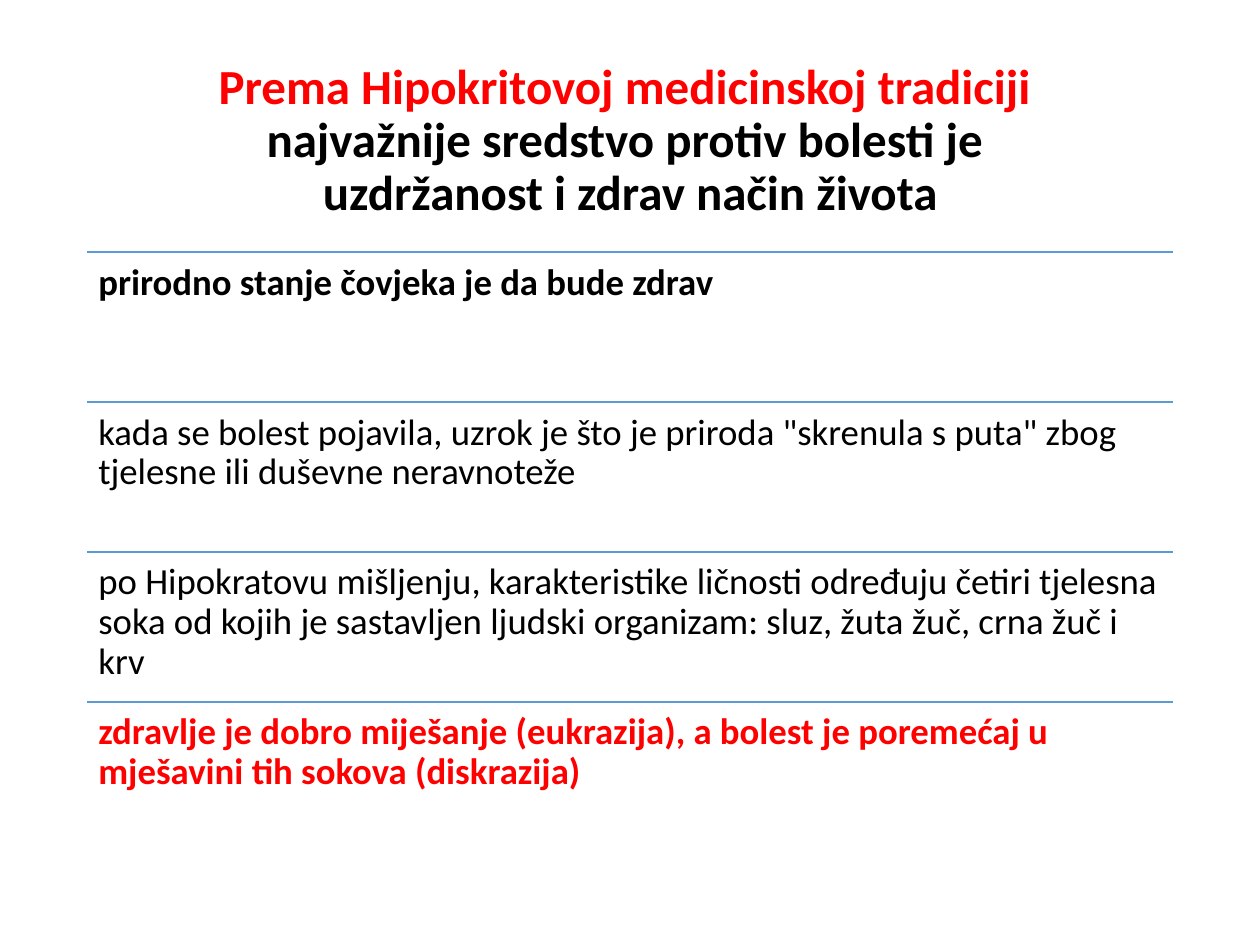
from dataclasses import dataclass

from lxml import etree
from pptx import Presentation
from pptx.dml.color import RGBColor
from pptx.enum.shapes import MSO_CONNECTOR
from pptx.enum.text import MSO_ANCHOR, MSO_AUTO_SIZE, PP_ALIGN
from pptx.oxml.ns import qn
from pptx.util import Inches, Pt

STRAIGHT = MSO_CONNECTOR.STRAIGHT
TOP, MIDDLE = MSO_ANCHOR.TOP, MSO_ANCHOR.MIDDLE
NO_FIT = MSO_AUTO_SIZE.NONE
CENTER, LEFT = PP_ALIGN.CENTER, PP_ALIGN.LEFT


@dataclass(frozen=True)
class Theme:
    font: str = "Calibri"
    title_size: int = 28
    body_size: int = 21
    accent: RGBColor = RGBColor(0xFF, 0x00, 0x00)
    text: RGBColor = RGBColor(0x00, 0x00, 0x00)
    rule: RGBColor = RGBColor(0x5B, 0x9B, 0xD5)


theme = Theme()

TITLE_LINES = [
    ("Prema Hipokritovoj medicinskoj tradiciji ", theme.accent),
    ("najvažnije sredstvo protiv bolesti je ", theme.text),
    ("uzdržanost i zdrav način života", theme.text),
]
STATEMENTS = [
    ("prirodno stanje čovjeka je da bude zdrav", theme.text, True),
    ('kada se bolest pojavila, uzrok je što je priroda "skrenula s puta" zbog '
     "tjelesne ili duševne neravnoteže", theme.text, False),
    ("po Hipokratovu mišljenju, karakteristike ličnosti određuju četiri tjelesna "
     "soka od kojih je sastavljen ljudski organizam: sluz, žuta žuč, crna žuč i krv",
     theme.text, False),
    ("zdravlje je dobro miješanje (eukrazija), a bolest je poremećaj u mješavini "
     "tih sokova (diskrazija)", theme.accent, True),
]
MARGIN, WIDTH = 0.69, 8.62
FIRST_ROW, ROW_HEIGHT = 2, 1.19


def add_span(para, text, size, color, bold):
    span = para.add_run()
    span.text = text
    span.font.name = theme.font
    span.font.size = Pt(size)
    span.font.color.rgb = color
    span.font.bold = bold


def prepare_frame(frame, anchor, align):
    """Set wrapping, anchor and line spacing; return the first paragraph."""
    frame.word_wrap = True
    frame.auto_size = NO_FIT
    frame.vertical_anchor = anchor
    para = frame.paragraphs[0]
    para.alignment = align
    para.line_spacing = 0.9
    return para


deck = Presentation()
deck.slide_width, deck.slide_height = Inches(10), Inches(7.5)
page = deck.slides.add_slide(deck.slide_layouts[5])

title = page.shapes.title
title.left, title.top = Inches(MARGIN), Inches(0.4)
title.width, title.height = Inches(WIDTH), Inches(1.45)
para = prepare_frame(title.text_frame, MIDDLE, CENTER)
for index, (text, color) in enumerate(TITLE_LINES):
    if index:
        para.add_line_break()
    add_span(para, text, theme.title_size, color, True)

for row, (text, color, bold) in enumerate(STATEMENTS):
    top = Inches(FIRST_ROW + row * ROW_HEIGHT)
    rule = page.shapes.add_connector(
        STRAIGHT, Inches(MARGIN), top, Inches(MARGIN + WIDTH), top)
    rule.line.color.rgb = theme.rule
    rule.line.width = Pt(1)
    etree.SubElement(rule._element.spPr, qn("a:effectLst"))

    box = page.shapes.add_textbox(
        Inches(MARGIN), top, Inches(WIDTH), Inches(ROW_HEIGHT))
    frame = box.text_frame
    frame.margin_left = frame.margin_right = Inches(0.09)
    frame.margin_top = frame.margin_bottom = Inches(0.09)
    para = prepare_frame(frame, TOP, LEFT)
    add_span(para, text, theme.body_size, color, bold)

deck.save("out.pptx")
